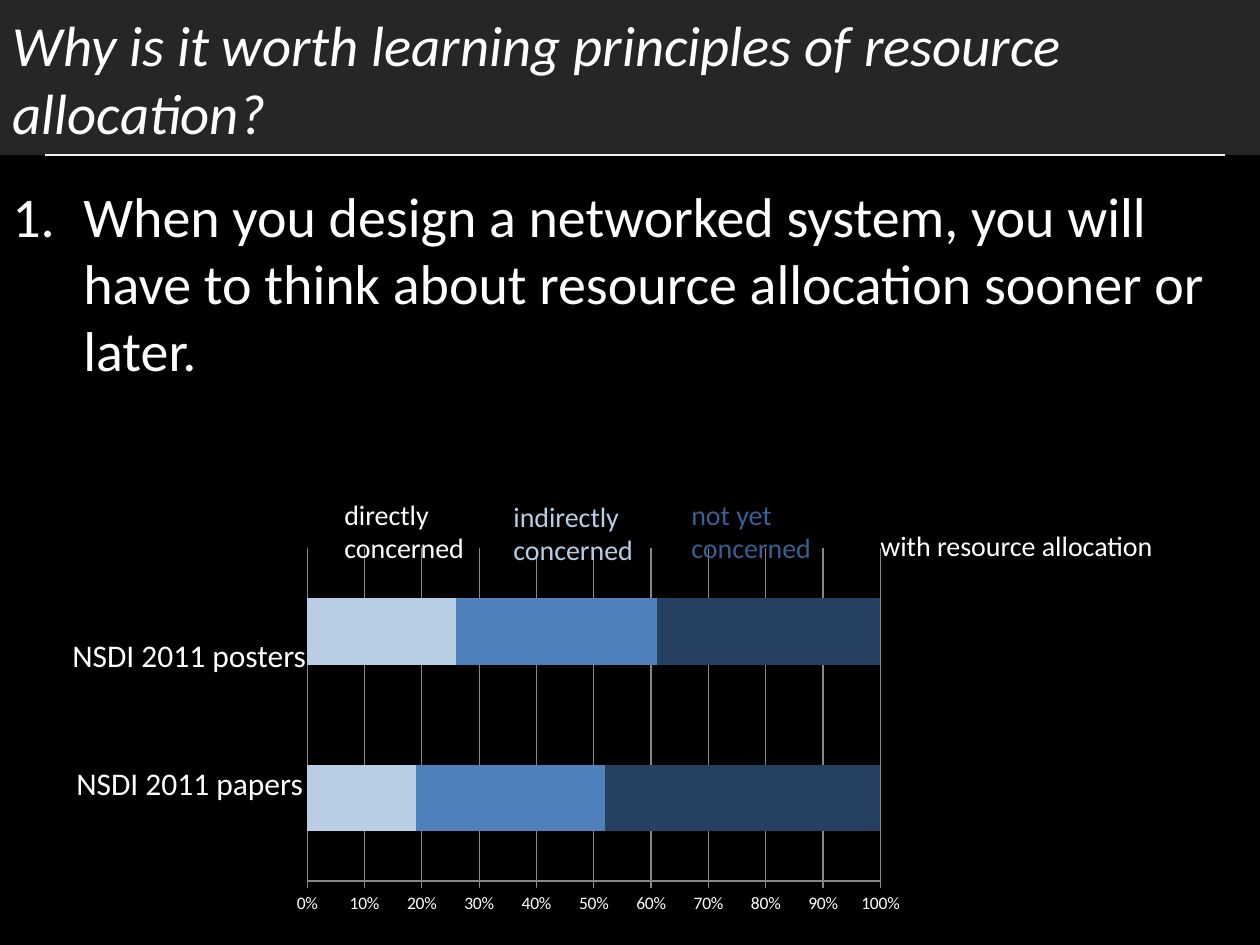
import lxml.etree
import pptx
import pptx.chart.data
import pptx.dml.color
import pptx.enum.chart
import pptx.enum.shapes
import pptx.enum.text
import pptx.oxml
import pptx.oxml.ns
import pptx.util

RGBColor = pptx.dml.color.RGBColor
BLACK = RGBColor(0x00, 0x00, 0x00)
CHARCOAL = RGBColor(0x26, 0x26, 0x26)
WHITE = RGBColor(0xFF, 0xFF, 0xFF)
OFF_WHITE = RGBColor(0xF2, 0xF2, 0xF2)
GRAY = RGBColor(0x86, 0x86, 0x86)
PALE_BLUE = RGBColor(0xB9, 0xCD, 0xE5)
BLUE = RGBColor(0x4F, 0x81, 0xBD)
NAVY = RGBColor(0x25, 0x40, 0x61)
LABEL_BLUE = RGBColor(0x37, 0x60, 0x92)
FONT = "Calibri"
PX_PER_INCH = 126


def px(length):
    """Turn pixels into EMU."""
    return pptx.util.Emu(round(length * 914400 / PX_PER_INCH))


def style_font(font, size, color):
    """Set the typeface, size and colour of a font."""
    font.name = FONT
    font.size = pptx.util.Pt(size)
    font.color.rgb = color


def add_text(slide, box, text, size, color, wrap=True):
    """Add a one-paragraph text box and return its paragraph."""
    frame = slide.shapes.add_textbox(*map(px, box)).text_frame
    frame.word_wrap = wrap
    paragraph = frame.paragraphs[0]
    paragraph.text = text
    style_font(paragraph.font, size, color)
    return paragraph


def add_header(slide, box):
    """Format the title as a band with a rule along its lower edge."""
    left, top, width, height = box
    title = slide.shapes.title
    title.left, title.top, title.width, title.height = map(px, box)
    title.fill.solid()
    title.fill.fore_color.rgb = CHARCOAL
    frame = title.text_frame
    frame.text = "Why is it worth learning principles of resource allocation?"
    frame.auto_size = pptx.enum.text.MSO_AUTO_SIZE.NONE
    frame.vertical_anchor = pptx.enum.text.MSO_ANCHOR.MIDDLE
    paragraph = frame.paragraphs[0]
    paragraph.alignment = pptx.enum.text.PP_ALIGN.LEFT
    style_font(paragraph.font, 32.4, WHITE)
    paragraph.font.italic = True

    bottom = px(top + height)
    rule = slide.shapes.add_connector(
        pptx.enum.shapes.MSO_CONNECTOR.STRAIGHT,
        px(left + 45), bottom, px(left + width - 35), bottom)
    rule.line.color.rgb = OFF_WHITE
    rule.line.width = pptx.util.Pt(0.75)
    lxml.etree.SubElement(
        rule._element.spPr, pptx.oxml.ns.qn("a:effectLst"))


def add_reason(slide, box):
    """Add the numbered statement."""
    paragraph = add_text(
        slide, box,
        "When you design a networked system, you will have to think about "
        "resource allocation sooner or later.", 32, WHITE)
    paragraph.space_before = pptx.util.Pt(6.4)
    properties = paragraph._p.get_or_add_pPr()
    properties.set("marL", str(px(71)))
    properties.set("indent", str(px(-71)))
    lxml.etree.SubElement(
        properties, pptx.oxml.ns.qn("a:buFont")).set("typeface", "+mj-lt")
    lxml.etree.SubElement(
        properties, pptx.oxml.ns.qn("a:buAutoNum")).set("type", "arabicPeriod")


def set_plot_layout(chart, x, y, w, h):
    """Fix the inner plot area to fractions of the chart."""
    plot_area = chart._chartSpace.chart.plotArea
    for layout in plot_area.findall(pptx.oxml.ns.qn("c:layout")):
        plot_area.remove(layout)
    values = "".join(
        f'<c:{name} val="{value}"/>'
        for name, value in (("x", x), ("y", y), ("w", w), ("h", h)))
    plot_area.insert(0, pptx.oxml.parse_xml(
        f'<c:layout {pptx.oxml.ns.nsdecls("c")}><c:manualLayout>'
        '<c:layoutTarget val="inner"/>'
        '<c:xMode val="edge"/><c:yMode val="edge"/>'
        f'{values}</c:manualLayout></c:layout>'))


def add_share_chart(slide, box):
    """Add the stacked bars with their row and column labels."""
    left, top, width, height = box
    data = pptx.chart.data.CategoryChartData()
    data.categories = ["1", "2"]
    data.add_series("Series 1", (19, 26))
    data.add_series("Series 2", (33, 35))
    data.add_series("Series 3", (48, 39))
    chart = slide.shapes.add_chart(
        pptx.enum.chart.XL_CHART_TYPE.BAR_STACKED_100,
        *map(px, box), data).chart
    chart.has_legend = False
    chart.has_title = False
    style_font(chart.font, 10, WHITE)
    set_plot_layout(chart, 0.04, 0.02, 0.91, 0.88)

    plot = chart.plots[0]
    plot.gap_width = 150
    plot.overlap = 100
    plot.vary_by_categories = False
    for series, color in zip(plot.series, (PALE_BLUE, BLUE, NAVY)):
        series.format.fill.solid()
        series.format.fill.fore_color.rgb = color

    chart.category_axis.visible = False
    axis = chart.value_axis
    axis.minimum_scale, axis.maximum_scale, axis.major_unit = 0, 1, 0.1
    axis.major_tick_mark = pptx.enum.chart.XL_TICK_MARK.OUTSIDE
    axis.tick_labels.number_format = "0%"
    axis.tick_labels.number_format_is_linked = False
    axis.has_major_gridlines = True
    for line in (axis.format.line, axis.major_gridlines.format.line):
        line.color.rgb = GRAY
        line.width = pptx.util.Pt(0.75)

    for x, y, label in ((-222, 89, "NSDI 2011 posters"),
                        (-218, 217, "NSDI 2011 papers")):
        add_text(slide, (left + x, top + y, 262, 50), label, 18, WHITE, False)
    for x, y, label_width, label, color in (
            (50, -50, 179, "directly concerned", WHITE),
            (219, -48, 179, "indirectly concerned", PALE_BLUE),
            (397, -50, 179, "not yet concerned", LABEL_BLUE),
            (586, -19, 397, "with resource allocation", WHITE)):
        add_text(slide, (left + x, top + y, label_width, 81), label, 16, color)


def main():
    """Build and save the slide."""
    presentation = pptx.Presentation()
    presentation.slide_width = px(1260)
    presentation.slide_height = px(945)
    slide = presentation.slides.add_slide(presentation.slide_layouts[5])
    slide.background.fill.solid()
    slide.background.fill.fore_color.rgb = BLACK
    add_header(slide, (0, 0, 1260, 155))
    add_reason(slide, (0, 175, 1260, 238))
    add_share_chart(slide, (282, 541, 630, 378))
    presentation.save("out.pptx")


if __name__ == "__main__":
    main()
